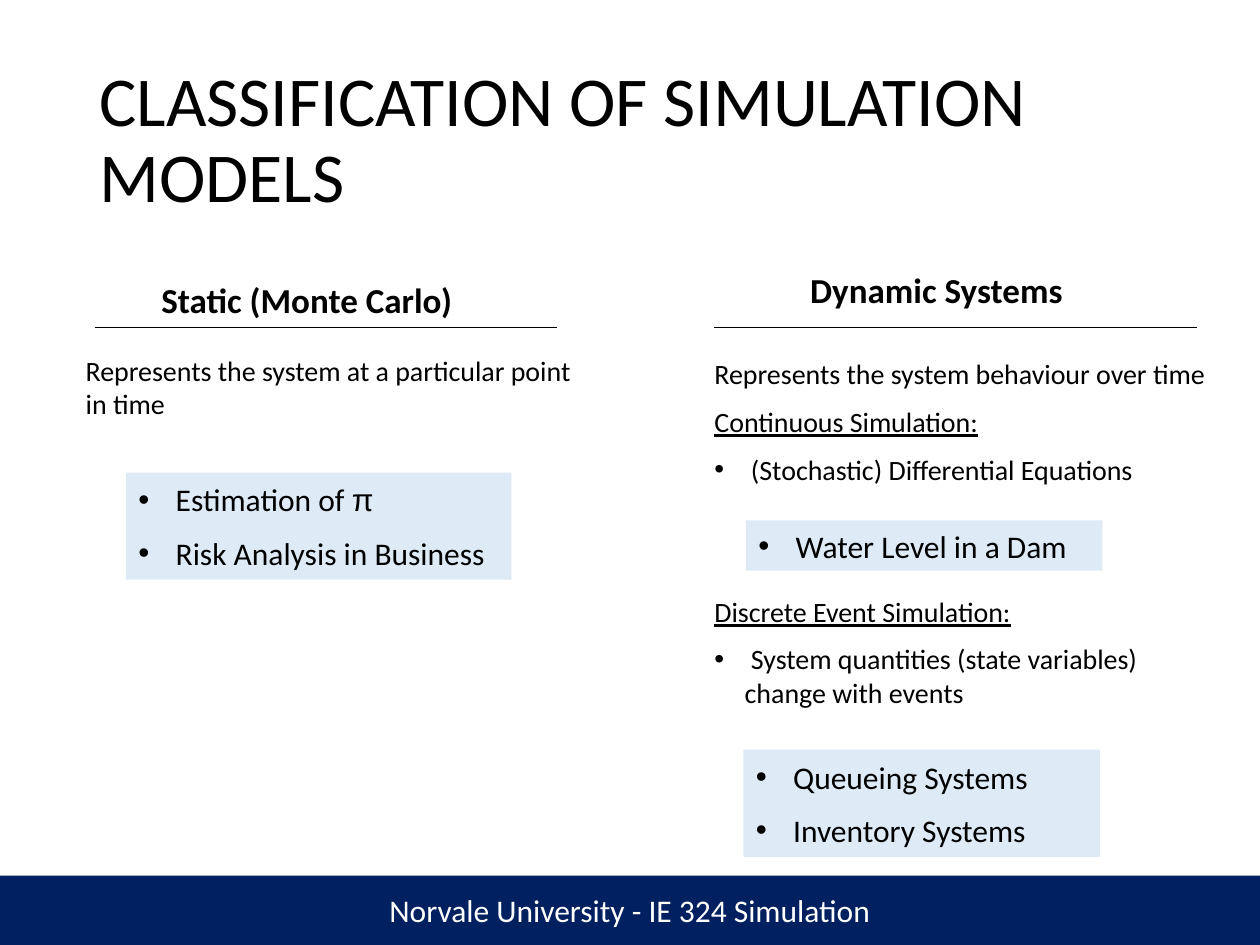
from dataclasses import dataclass

from lxml import etree
from pptx import Presentation
from pptx.dml.color import RGBColor
from pptx.enum import shapes, text
from pptx.oxml import ns
from pptx.util import Inches, Pt


@dataclass(frozen=True)
class Theme:
    ink: RGBColor = RGBColor(0x00, 0x00, 0x00)
    paper: RGBColor = RGBColor(0xFF, 0xFF, 0xFF)
    navy: RGBColor = RGBColor(0x00, 0x20, 0x60)
    pale_blue: RGBColor = RGBColor(0xDE, 0xEB, 0xF7)
    font: str = "Calibri"
    symbol_font: str = "Arial"
    title: int = 40
    heading: int = 20
    example: int = 18
    body: int = 16


@dataclass(frozen=True)
class Box:
    left: float
    top: float
    width: float
    height: float


@dataclass(frozen=True)
class Line:
    words: str
    symbol: str = ""
    bullet: bool = False
    underline: bool = False
    before: float | None = None


@dataclass(frozen=True)
class Column:
    heading: str
    heading_box: Box
    rule: tuple[float, float]
    description: list[Line]
    description_box: Box


@dataclass(frozen=True)
class Examples:
    names: list[Line]
    box: Box


THEME = Theme()
HANG = 0.24
RULE_TOP = 2.6

COLUMNS = [
    Column(
        "Static (Monte Carlo)", Box(1.18, 2.16, 2.6, 0.43), (0.75, 4.42),
        [Line("Represents the system at a particular point in time")],
        Box(0.58, 2.75, 4.17, 0.64),
    ),
    Column(
        "Dynamic Systems", Box(6.33, 2.08, 2.23, 0.43), (5.67, 9.5),
        [
            Line("Represents the system behaviour over time"),
            Line("Continuous Simulation:", underline=True),
            Line(" (Stochastic) Differential Equations", bullet=True),
            Line("Discrete Event Simulation:", underline=True, before=62),
            Line(" System quantities (state variables) change with events", bullet=True),
        ],
        Box(5.57, 2.71, 4.17, 3.04),
    ),
]

EXAMPLES = [
    Examples(
        [Line(" Estimation of ", symbol="π", bullet=True),
         Line(" Risk Analysis in Business", bullet=True)],
        Box(1, 3.75, 3.06, 0.85),
    ),
    Examples([Line(" Water Level in a Dam", bullet=True)], Box(5.92, 4.13, 2.83, 0.4)),
    Examples(
        [Line(" Queueing Systems", bullet=True), Line(" Inventory Systems", bullet=True)],
        Box(5.9, 5.95, 2.83, 0.85),
    ),
]


def edges(box: Box) -> tuple:
    return tuple(Inches(n) for n in (box.left, box.top, box.width, box.height))


def place(holder, box: Box) -> None:
    holder.left, holder.top, holder.width, holder.height = edges(box)


def set_bullet(paragraph, bullet: bool) -> None:
    properties = paragraph._p.get_or_add_pPr()
    hang = Inches(HANG) if bullet else 0
    properties.set("marL", str(hang))
    properties.set("indent", str(-hang))
    if bullet:
        etree.SubElement(properties, ns.qn("a:buFont"), typeface=THEME.symbol_font)
        etree.SubElement(properties, ns.qn("a:buChar"), char="•")
    else:
        etree.SubElement(properties, ns.qn("a:buNone"))


def write(holder, lines: list[Line], size: int, color: RGBColor = THEME.ink,
          bold: bool = False, align=text.PP_ALIGN.LEFT) -> None:
    frame = holder.text_frame
    frame.text = "\n".join(line.words for line in lines)
    frame.word_wrap = True
    frame.auto_size = text.MSO_AUTO_SIZE.NONE
    frame.vertical_anchor = text.MSO_ANCHOR.MIDDLE
    for row, (paragraph, line) in enumerate(zip(frame.paragraphs, lines)):
        paragraph.alignment = align
        gap = size / 2 if line.before is None else line.before
        paragraph.space_before = Pt(gap if row else 0)
        set_bullet(paragraph, line.bullet)
        if line.symbol:
            paragraph.add_run().text = line.symbol
        for run in paragraph.runs:
            run.font.name = THEME.symbol_font if run.text == line.symbol else THEME.font
            run.font.size = Pt(size)
            run.font.bold = bold
            run.font.underline = line.underline
            run.font.color.rgb = color


def add_panel(slide, box: Box, fill: RGBColor):
    panel = slide.shapes.add_shape(shapes.MSO_SHAPE.RECTANGLE, *edges(box))
    panel.shadow.inherit = False
    panel.fill.solid()
    panel.fill.fore_color.rgb = fill
    panel.line.fill.background()
    return panel


def add_rule(slide, start: float, end: float) -> None:
    rule = slide.shapes.add_connector(
        shapes.MSO_CONNECTOR.STRAIGHT,
        Inches(start), Inches(RULE_TOP), Inches(end), Inches(RULE_TOP),
    )
    rule.line.color.rgb = THEME.ink
    rule.line.width = Pt(1)
    etree.SubElement(rule._element.spPr, ns.qn("a:effectLst"))


def add_column(slide, column: Column, heading, description) -> None:
    place(heading, column.heading_box)
    write(heading, [Line(column.heading)], THEME.heading, bold=True)
    add_rule(slide, *column.rule)
    place(description, column.description_box)
    write(description, column.description, THEME.body)


def main() -> None:
    deck = Presentation()
    deck.slide_width, deck.slide_height = Inches(10), Inches(7.5)
    slide = deck.slides.add_slide(deck.slide_layouts.get_by_name("Comparison"))

    footer = add_panel(slide, Box(0, 6.95, 10, 0.55), THEME.navy)
    write(footer, [Line("Norvale University - IE 324 Simulation")], THEME.example,
          color=THEME.paper, align=text.PP_ALIGN.CENTER)

    title = slide.shapes.title
    place(title, Box(0.69, 0.4, 8.62, 1.45))
    write(title, [Line("CLASSIFICATION OF SIMULATION MODELS")], THEME.title)
    title.text_frame.paragraphs[0].line_spacing = 0.9

    holders = slide.placeholders
    for column, (heading, description) in zip(COLUMNS, [(1, 2), (3, 4)]):
        add_column(slide, column, holders[heading], holders[description])

    for examples in EXAMPLES:
        panel = add_panel(slide, examples.box, THEME.pale_blue)
        write(panel, examples.names, THEME.example)

    deck.save("out.pptx")


if __name__ == "__main__":
    main()
